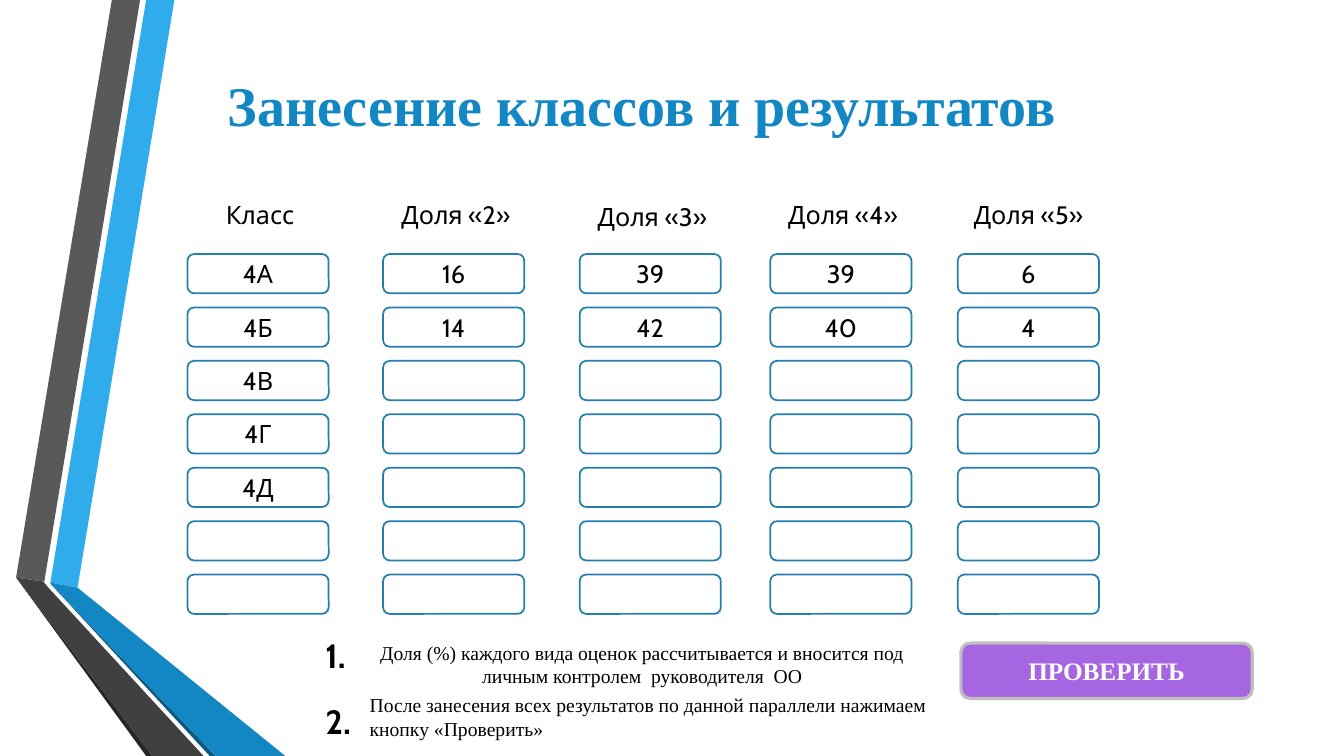
from dataclasses import dataclass

from pptx import Presentation
from pptx.dml.color import RGBColor
from pptx.enum import shapes, text
from pptx.util import Inches, Pt


@dataclass(frozen=True)
class Theme:
    title: str = "1287C3"
    cell_line: str = "247FAF"
    button: str = "A666E1"
    button_line: str = "BFBFBF"
    black: str = "000000"
    white: str = "FFFFFF"
    sans: str = "Cabin"
    serif: str = "Times New Roman"
    title_size: int = 40
    number_size: int = 24
    body_size: int = 18
    note_size: int = 14


THEME = Theme()

RIBBONS = [
    ("30ACEC", [(0.5, 5.78), (0.77, 5.83), (1.73, 0), (1.45, 0)]),
    ("595959", [(1.39, 0), (1.11, 0), (0.16, 5.73), (0.44, 5.77)]),
    ("262626", [(0.16, 5.73), (1.45, 7.5), (1.51, 7.5)]),
    ("0C5A82", [(0.5, 5.79), (2.08, 7.5), (2.14, 7.5)]),
    ("1287C3", [(0.5, 5.79), (2.14, 7.5), (2.83, 7.5), (0.77, 5.83), (0.5, 5.78)]),
    ("404040", [(2.02, 7.5), (0.48, 5.83), (0.43, 5.77), (0.16, 5.73), (1.51, 7.5)]),
]

# Header, header left, header top, cells left, values
COLUMNS = [
    ("Класс", 1.86, 1.85, 1.86, ["4А", "4Б", "4В", "4Г", "4Д"]),
    ("Доля «2»", 3.8, 1.85, 3.8, ["16", "14"]),
    ("Доля «3»", 5.75, 1.87, 5.75, ["39", "42"]),
    ("Доля «4»", 7.64, 1.85, 7.64, ["39", "40"]),
    ("Доля «5»", 9.48, 1.85, 9.5, ["6", "4"]),
]
ROWS, ROW_TOP, ROW_PITCH = 7, 2.52, 0.53
CELL_W, CELL_H = 1.4, 0.39
HEADER_W, HEADER_H = 1.44, 0.55


def write(s, content, *, size=THEME.body_size, font=THEME.sans, color=THEME.black,
          bold=False, align=text.PP_ALIGN.CENTER,
          anchor=text.MSO_ANCHOR.MIDDLE, wrap=True):
    tf = s.text_frame
    tf.word_wrap = wrap
    tf.vertical_anchor = anchor
    p = tf.paragraphs[0]
    p.alignment = align
    r = p.add_run()
    r.text = content
    r.font.size = Pt(size)
    r.font.name = font
    r.font.bold = bold
    r.font.color.rgb = RGBColor.from_string(color)


def add_ribbon(sld, color, points):
    corners = [(Inches(x), Inches(y)) for x, y in points]
    builder = sld.shapes.build_freeform(*corners[0])
    builder.add_line_segments(corners[1:], close=True)
    s = builder.convert_to_shape()
    s.shadow.inherit = False
    s.fill.solid()
    s.fill.fore_color.rgb = RGBColor.from_string(color)
    s.line.fill.background()


def add_round_box(sld, left, top, width, height, fill=None, line=None, line_width=1.25):
    s = sld.shapes.add_shape(shapes.MSO_SHAPE.ROUNDED_RECTANGLE, Inches(left),
                             Inches(top), Inches(width), Inches(height))
    s.shadow.inherit = False
    if fill:
        s.fill.solid()
        s.fill.fore_color.rgb = RGBColor.from_string(fill)
    else:
        s.fill.background()
    if line:
        s.line.color.rgb = RGBColor.from_string(line)
        s.line.width = Pt(line_width)
    else:
        s.line.fill.background()
    return s


def add_text_box(sld, left, top, width, height, content, **style):
    s = sld.shapes.add_textbox(Inches(left), Inches(top), Inches(width), Inches(height))
    write(s, content, **style)


def add_column(sld, header, header_left, header_top, left, values):
    write(add_round_box(sld, header_left, header_top, HEADER_W, HEADER_H), header)
    for row in range(ROWS):
        cell = add_round_box(sld, left, ROW_TOP + row * ROW_PITCH, CELL_W, CELL_H,
                             line=THEME.cell_line)
        if row < len(values):
            write(cell, values[row])


def add_note(sld, number, number_top, left, top, content, align):
    write(add_round_box(sld, left, top, 6.02, 0.36), content,
          size=THEME.note_size, font=THEME.serif, align=align)
    add_text_box(sld, 3.13, number_top, 0.46, 0.5, number, size=THEME.number_size,
                 bold=True, align=text.PP_ALIGN.LEFT,
                 anchor=text.MSO_ANCHOR.TOP, wrap=False)


def main():
    prs = Presentation()
    prs.slide_width, prs.slide_height = Inches(13.33), Inches(7.5)
    sld = prs.slides.add_slide(prs.slide_layouts[6])

    for color, points in RIBBONS:
        add_ribbon(sld, color, points)
    add_text_box(sld, 1.81, 0.08, 9.11, 1.9, "Занесение классов и результатов",
                 size=THEME.title_size, font=THEME.serif, color=THEME.title, bold=True)
    for column in COLUMNS:
        add_column(sld, *column)

    button = add_round_box(sld, 9.53, 6.38, 2.89, 0.55, fill=THEME.button,
                           line=THEME.button_line, line_width=2.25)
    write(button, "ПРОВЕРИТЬ", font=THEME.serif, color=THEME.white, bold=True)

    add_note(sld, "1.", 6.25, 3.36, 6.41,
             "Доля (%) каждого вида оценок рассчитывается и вносится под "
             "личным контролем  руководителя  ОО", text.PP_ALIGN.CENTER)
    add_note(sld, "2.", 6.9, 3.55, 6.93,
             "После занесения всех результатов по данной параллели нажимаем "
             "кнопку «Проверить»", text.PP_ALIGN.LEFT)

    prs.save("out.pptx")


if __name__ == "__main__":
    main()
